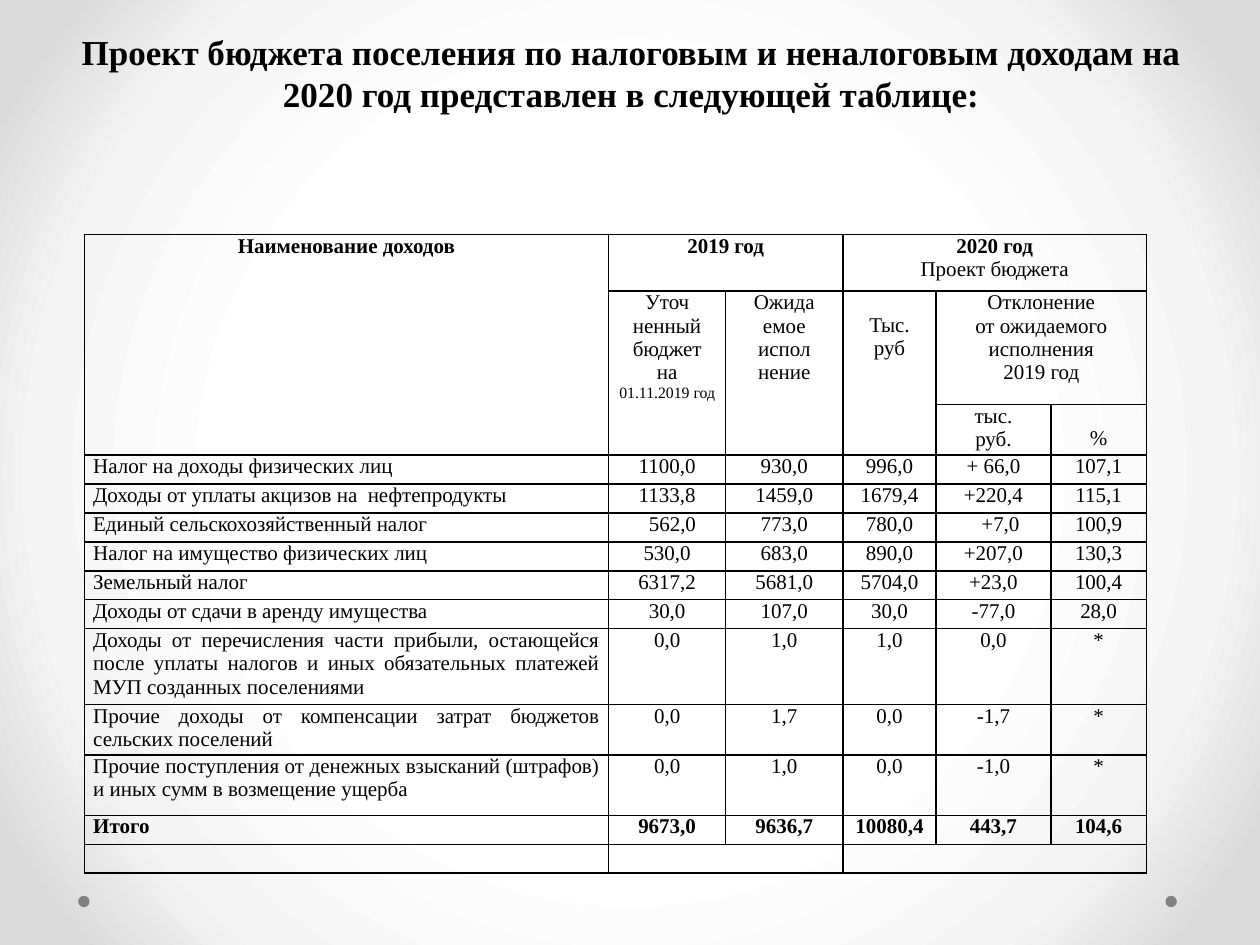
from lxml import etree
from pptx import Presentation
from pptx.dml.color import RGBColor
from pptx.enum.shapes import MSO_SHAPE as Shape
from pptx.enum.text import MSO_ANCHOR as Anchor, PP_ALIGN as Align
from pptx.oxml import parse_xml
from pptx.oxml.ns import nsdecls, qn
from pptx.util import Inches, Pt

COLORS = {"ink": "000000", "dot": "808080", "center": "FFFFFF", "ring": "F4F4F4", "edge": "DADADA"}
TITLE = ("Проект бюджета поселения по налоговым и неналоговым доходам на "
         "2020 год представлен в следующей таблице:")
COLUMNS = [4.16, 0.93, 0.93, 0.74, 0.91, 0.76]
ROWS = [0.45, 0.9, 0.4] + [0.23] * 6 + [0.6, 0.4, 0.48, 0.23, 0.23]
MERGES = [(0, 0, 2, 0), (0, 1, 0, 2), (0, 3, 0, 5), (1, 1, 2, 1), (1, 2, 2, 2),
          (1, 3, 2, 3), (1, 4, 1, 5), (13, 1, 13, 2), (13, 3, 13, 5)]
HEADER = [
    ["Наименование доходов", "2019 год", "", "2020 год\nПроект бюджета", "", ""],
    ["", "Уточ\nненный бюджет\nна\n01.11.2019 год", "Ожида\nемое испол\nнение", "Тыс.\nруб",
     "Отклонение\nот ожидаемого\nисполнения\n2019 год", ""],
    ["", "", "", "", "тыс.\nруб.", "%"],
]
INCOME = [
    ["Налог на доходы физических лиц", "1100,0", "930,0", "996,0", "+ 66,0", "107,1"],
    ["Доходы от уплаты акцизов на  нефтепродукты", "1133,8", "1459,0", "1679,4", "+220,4", "115,1"],
    ["Единый сельскохозяйственный налог", "562,0", "773,0", "780,0", "+7,0", "100,9"],
    ["Налог на имущество физических лиц", "530,0", "683,0", "890,0", "+207,0", "130,3"],
    ["Земельный налог", "6317,2", "5681,0", "5704,0", "+23,0", "100,4"],
    ["Доходы от сдачи в аренду имущества", "30,0", "107,0", "30,0", "-77,0", "28,0"],
    ["Доходы от перечисления части прибыли, остающейся после уплаты налогов и иных "
     "обязательных платежей МУП созданных поселениями", "0,0", "1,0", "1,0", "0,0", "*"],
    ["Прочие доходы от компенсации затрат бюджетов сельских поселений",
     "0,0", "1,7", "0,0", "-1,7", "*"],
    ["Прочие поступления от денежных взысканий (штрафов) и иных сумм в возмещение ущерба",
     "0,0", "1,0", "0,0", "-1,0", "*"],
    ["Итого", "9673,0", "9636,7", "10080,4", "443,7", "104,6"],
    [""] * 6,
]
BOLD_ROWS = {0, 12}
EXCEPTIONS = {"Проект бюджета": {"bold": False}, "01.11.2019 год": {"size": Pt(9)}}
INDENTS = {(5, 1): 0.25, (5, 4): 0.29}
LOWERED = {(1, 3), (2, 5)}


class BudgetSlide:
    """Hold the style and the current page, and draw each kind of element."""

    def __init__(self, page):
        self.page = page
        self.style = {"name": "Times New Roman", "size": Pt(12), "bold": False}

    def apply(self, target, values):
        for name, value in values.items():
            setattr(target, name, value)

    def background(self, stops):
        self.page.background.fill.gradient()
        old = self.page.element.find(".//" + qn("a:gradFill"))
        marks = "".join(f'<a:gs pos="{at * 1000}"><a:srgbClr val="{COLORS[key]}"/></a:gs>'
                        for at, key in stops)
        gradient = parse_xml(
            f'<a:gradFill {nsdecls("a")} rotWithShape="1"><a:gsLst>{marks}</a:gsLst>'
            '<a:path path="circle"><a:fillToRect l="50000" t="50000" r="50000" b="50000"/>'
            '</a:path></a:gradFill>')
        old.getparent().replace(old, gradient)

    def text(self, frame, text, align, **changes):
        for index, line in enumerate(text.split("\n")):
            para = frame.paragraphs[0] if index == 0 else frame.add_paragraph()
            para.alignment = align
            if line:
                span = para.add_run()
                span.text = line
                self.apply(span.font, {**self.style, **changes, **EXCEPTIONS.get(line, {})})
                span.font.color.rgb = RGBColor.from_string(COLORS["ink"])
            else:
                etree.SubElement(para._p, qn("a:endParaRPr"), sz="1200")

    def title(self, text, left, top, width, height):
        box = self.page.shapes.add_textbox(*map(Inches, (left, top, width, height)))
        self.apply(box.text_frame, {"word_wrap": True, "vertical_anchor": Anchor.BOTTOM})
        self.text(box.text_frame, text, Align.CENTER, size=Pt(20), bold=True)

    def dot(self, left, top, size):
        dot = self.page.shapes.add_shape(Shape.OVAL, *map(Inches, (left, top, size, size)))
        dot.shadow.inherit = False
        dot.fill.solid()
        dot.fill.fore_color.rgb = RGBColor.from_string(COLORS["dot"])
        dot.line.fill.background()

    def borders(self, cell):
        props = cell._tc.get_or_add_tcPr()
        for index, side in enumerate(("lnL", "lnR", "lnT", "lnB")):
            props.insert(index, parse_xml(
                f'<a:{side} {nsdecls("a")} w="{Pt(1)}"><a:solidFill>'
                f'<a:srgbClr val="{COLORS["ink"]}"/></a:solidFill></a:{side}>'))

    def cell(self, cell, text, row, column):
        self.apply(cell, {"margin_left": Inches(0.07), "margin_right": Inches(0.07),
                          "margin_top": Inches(0.18 if (row, column) in LOWERED else 0),
                          "margin_bottom": 0})
        cell.fill.background()
        align = Align.CENTER
        if column == 0 and row >= len(HEADER):
            align = Align.JUSTIFY if row >= 9 else Align.LEFT
        if (row, column) in INDENTS:
            align = Align.LEFT
            cell.margin_left += Inches(INDENTS[row, column])
        self.text(cell.text_frame, text, align, bold=row in BOLD_ROWS)
        if not cell.is_spanned:
            self.borders(cell)

    def table(self, left, top, rows):
        size = (left, top, sum(COLUMNS), sum(ROWS))
        table = self.page.shapes.add_table(len(ROWS), len(COLUMNS), *map(Inches, size)).table
        self.apply(table, {"first_row": False, "horz_banding": False})
        for column, width in zip(table.columns, COLUMNS):
            column.width = Inches(width)
        for row, height in zip(table.rows, ROWS):
            row.height = Inches(height)
        for top_row, first, bottom_row, last in MERGES:
            table.cell(top_row, first).merge(table.cell(bottom_row, last))
        for row, texts in enumerate(rows):
            for column, text in enumerate(texts):
                self.cell(table.cell(row, column), text, row, column)


def main():
    deck = Presentation()
    deck.slide_width, deck.slide_height = Inches(10), Inches(7.5)
    slide = BudgetSlide(deck.slides.add_slide(deck.slide_layouts[6]))
    slide.background([(50, "center"), (76, "ring"), (92, "edge")])
    for left in (9.25, 0.62):
        slide.dot(left, 7.11, 0.09)
    slide.title(TITLE, 0.51, 0.36, 9, 0.6)
    slide.table(0.67, 1.86, HEADER + INCOME)
    deck.save("out.pptx")


if __name__ == "__main__":
    main()
